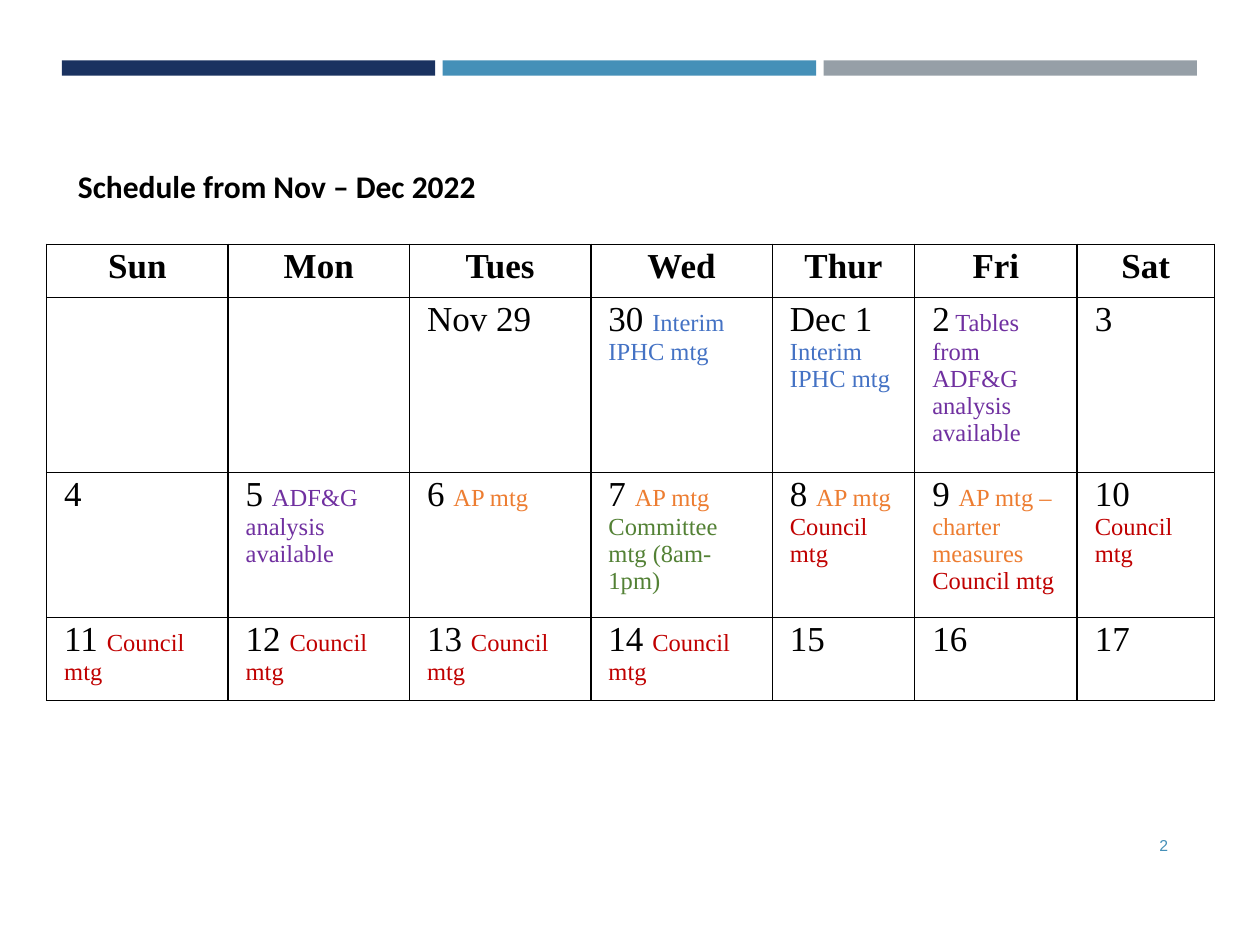
from lxml import etree
from pptx import Presentation
from pptx.dml.color import RGBColor
from pptx.enum.shapes import MSO_SHAPE as SHAPE
from pptx.enum.text import MSO_ANCHOR as ANCHOR, PP_ALIGN as ALIGN
from pptx.oxml.ns import qn
from pptx.util import Inches, Pt

COLORS = {
    "black": "000000", "navy": "1A3260", "teal": "4590B8", "gray": "969FA7",
    "blue": "4472C4", "purple": "7030A0", "orange": "ED7D31",
    "green": "538135", "red": "C00000",
}
DAYS = ["Sun", "Mon", "Tues", "Wed", "Thur", "Fri", "Sat"]
COL_WIDTHS = [1.44, 1.44, 1.44, 1.44, 1.13, 1.29, 1.09]
ROW_HEIGHTS = [0.42, 1.39, 1.15, 0.66]

INTERIM = ("Interim IPHC mtg", "blue")
COUNCIL = ("Council mtg", "red")
AP = ("AP mtg", "orange")
WEEKS = [
    [[], [], [["Nov 29"]], [["30 ", INTERIM]], [["Dec 1 ", INTERIM]],
     [["2", (" Tables from ADF&G analysis available", "purple")]], [["3"]]],
    [[["4"]], [["5 ", ("ADF&G analysis available", "purple")]], [["6 ", AP]],
     [["7 ", AP], [("Committee mtg (8am- 1pm)", "green")]],
     [["8 ", AP], [COUNCIL]],
     [["9 ", ("AP mtg – charter measures", "orange")], [COUNCIL]],
     [["10"], [COUNCIL]]],
    [[[f"{day} ", COUNCIL]] for day in range(11, 15)]
    + [[[str(day)]] for day in range(15, 18)],
]


def add_run(p, text, font="Times New Roman", size=20, color="black", bold=False):
    """Append formatted text to a paragraph."""
    r = p.add_run()
    r.text = text
    r.font.name, r.font.size, r.font.bold = font, Pt(size), bold
    r.font.color.rgb = RGBColor.from_string(COLORS[color])


class Calendar:
    """Hold the calendar style and the current slide."""

    border_width = Pt(1)
    event_size = 14

    def __init__(self, prs):
        self.s = prs.slides.add_slide(prs.slide_layouts[6])

    def bar(self, left, top, width, height, color):
        """Add a plain coloured bar."""
        sp = self.s.shapes.add_shape(
            SHAPE.RECTANGLE, Inches(left), Inches(top), Inches(width), Inches(height))
        sp.shadow.inherit = False
        sp.fill.solid()
        sp.fill.fore_color.rgb = RGBColor.from_string(COLORS[color])
        sp.line.fill.background()

    def text(self, left, top, width, height, text, align=ALIGN.LEFT,
             anchor=ANCHOR.TOP, wrap=True, **style):
        """Add a one-paragraph text box."""
        sp = self.s.shapes.add_textbox(
            Inches(left), Inches(top), Inches(width), Inches(height))
        tf = sp.text_frame
        tf.word_wrap, tf.vertical_anchor = wrap, anchor
        p = tf.paragraphs[0]
        p.alignment = align
        add_run(p, text, **style)

    def borders(self, cell):
        """Draw a black line on each side of a cell."""
        props = cell._tc.get_or_add_tcPr()
        for i, side in enumerate("LRTB"):
            ln = etree.Element(qn(f"a:ln{side}"), w=str(self.border_width))
            fill = etree.SubElement(ln, qn("a:solidFill"))
            etree.SubElement(fill, qn("a:srgbClr"), val=COLORS["black"])
            props.insert(i, ln)

    def cell(self, cell, paragraphs, align=ALIGN.LEFT, bold=False):
        """Fill a cell with dates and coloured events."""
        cell.margin_left = cell.margin_right = Inches(0.14)
        cell.margin_top, cell.margin_bottom = Inches(0.02), 0
        cell.fill.background()
        self.borders(cell)
        tf = cell.text_frame
        for i, parts in enumerate(paragraphs):
            p = tf.add_paragraph() if i else tf.paragraphs[0]
            p.alignment = align
            for part in parts:
                if isinstance(part, str):
                    add_run(p, part, bold=bold)
                else:
                    event, color = part
                    add_run(p, event, size=self.event_size, color=color)

    def table(self, left, top, days, weeks):
        """Add the calendar grid."""
        table = self.s.shapes.add_table(
            len(weeks) + 1, len(days), Inches(left), Inches(top),
            Inches(sum(COL_WIDTHS)), Inches(sum(ROW_HEIGHTS))).table
        table.first_row = table.horz_banding = False
        for col, width in zip(table.columns, COL_WIDTHS):
            col.width = Inches(width)
        for row, height in zip(table.rows, ROW_HEIGHTS):
            row.height = Inches(height)
        for c, day in enumerate(days):
            self.cell(table.cell(0, c), [[day]], align=ALIGN.CENTER, bold=True)
        for r, week in enumerate(weeks, 1):
            for c, paragraphs in enumerate(week):
                self.cell(table.cell(r, c), paragraphs)


def main():
    prs = Presentation()
    prs.slide_width, prs.slide_height = Inches(10), Inches(7.5)
    calendar = Calendar(prs)

    left, right, gap = 0.49, 9.5, 0.06
    width = (right - left - 2 * gap) / 3
    for i, color in enumerate(["navy", "teal", "gray"]):
        calendar.bar(left + i * (width + gap), 0.48, width, 0.12, color)

    calendar.text(8.53, 6.51, 0.84, 0.4, "2", align=ALIGN.RIGHT,
                  anchor=ANCHOR.MIDDLE, font="Arial", size=9, color="teal")
    calendar.table(0.37, 1.94, DAYS, WEEKS)
    calendar.text(0.52, 1.28, 3.82, 0.4, "Schedule from Nov – Dec 2022",
                  wrap=False, font="Calibri", size=18, bold=True)
    prs.save("out.pptx")


if __name__ == "__main__":
    main()
